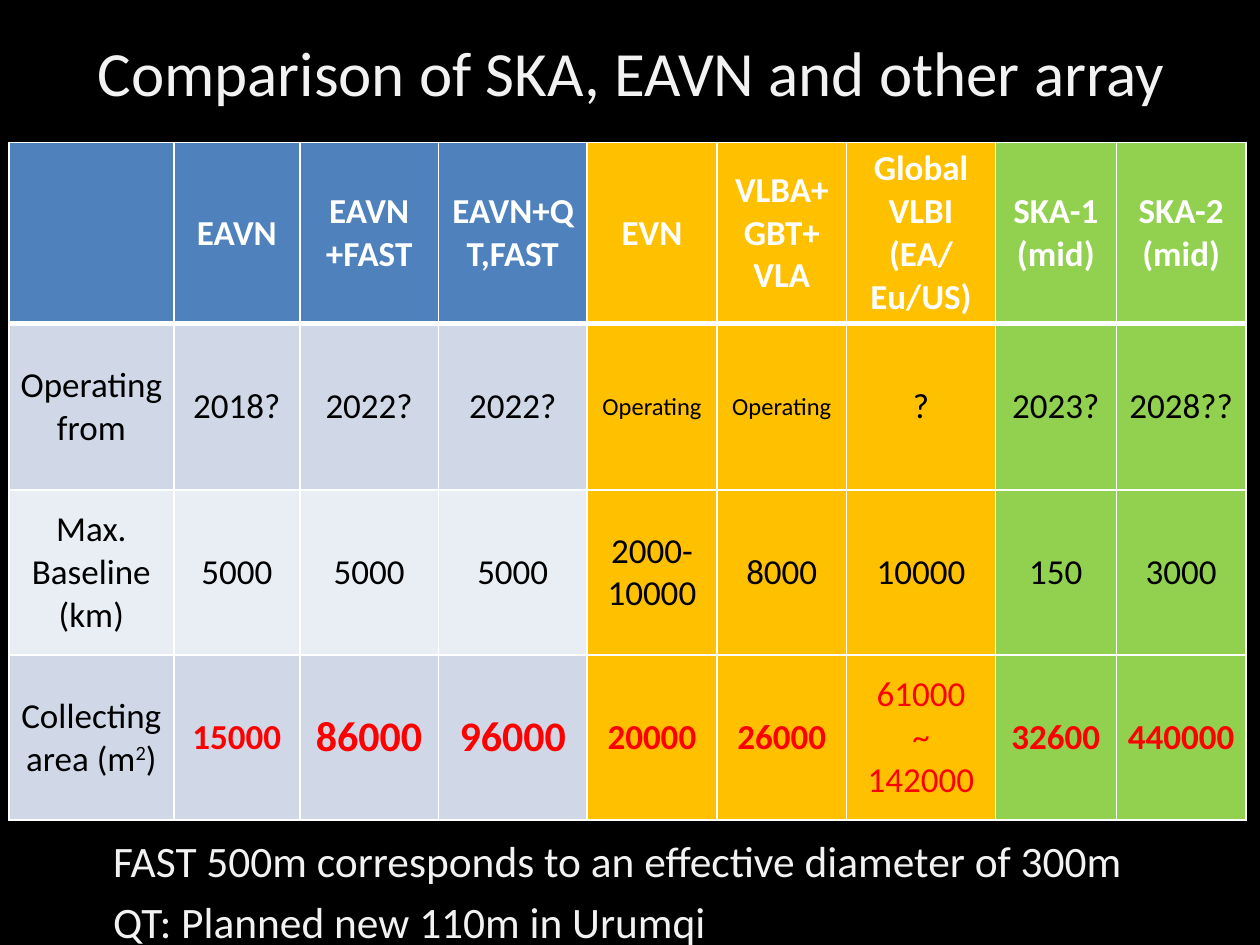
"""Build a slide comparing the SKA, the EAVN and other radio arrays."""
import pptx
import pptx.dml.color
import pptx.enum.text
import pptx.oxml
import pptx.oxml.ns
import pptx.util

Inches = pptx.util.Inches
Pt = pptx.util.Pt
RGBColor = pptx.dml.color.RGBColor
PP_ALIGN = pptx.enum.text.PP_ALIGN
MIDDLE = pptx.enum.text.MSO_ANCHOR.MIDDLE

BLACK = RGBColor(0x00, 0x00, 0x00)
WHITE = RGBColor(0xFF, 0xFF, 0xFF)
LIGHT = RGBColor(0xF2, 0xF2, 0xF2)
RED = RGBColor(0xFF, 0x00, 0x00)
BLUE = RGBColor(0x4F, 0x81, 0xBD)
BAND_DARK = RGBColor(0xD0, 0xD8, 0xE8)
BAND_LIGHT = RGBColor(0xE9, 0xED, 0xF4)
ORANGE = RGBColor(0xFF, 0xC0, 0x00)
GREEN = RGBColor(0x92, 0xD0, 0x50)

COL_WIDTHS = [1.31, 1, 1.1, 1.18, 1.03, 1.03, 1.18, 0.96, 1.03]
ROW_HEIGHTS = [1.44, 1.32, 1.31, 1.31]
ROW_FILLS = [BLUE, BAND_DARK, BAND_LIGHT, BAND_DARK]
GROUP_FILLS = [None] * 4 + [ORANGE] * 3 + [GREEN] * 2
ROWS = [
    ["", "EAVN", "EAVN\n+FAST", "EAVN+QT,FAST", "EVN", "VLBA+\nGBT+\nVLA",
     "Global\nVLBI\n(EA/Eu/US)", "SKA-1\n(mid)", "SKA-2\n(mid)"],
    ["Operating from", "2018?", "2022?", "2022?", "Operating", "Operating",
     "?", "2023?", "2028??"],
    ["Max.\nBaseline\n(km)", "5000", "5000", "5000", "2000-10000", "8000",
     "10000", "150", "3000"],
    ["Collecting area (m", "15000", "86000", "96000", "20000", "26000",
     "61000\n~\n142000", "32600", "440000"],
]
SIZES = {"Operating": 14, "86000": 24, "96000": 24}


def style(p, size, color, bold=False, align=PP_ALIGN.CENTER):
    p.alignment = align
    p.font.name = "Calibri"
    p.font.size = Pt(size)
    p.font.bold = bold
    p.font.color.rgb = color


def add_borders(cell, bottom, top):
    tc_pr = cell._tc.get_or_add_tcPr()
    for i, (side, width) in enumerate([("L", 1), ("R", 1), ("T", top), ("B", bottom)]):
        tc_pr.insert(i, pptx.oxml.parse_xml(
            f'<a:ln{side} {pptx.oxml.ns.nsdecls("a")} w="{Pt(width)}">'
            f'<a:solidFill><a:srgbClr val="{WHITE}"/></a:solidFill></a:ln{side}>'))


prs = pptx.Presentation()
prs.slide_width = Inches(10)
prs.slide_height = Inches(7.5)
s = prs.slides.add_slide(prs.slide_layouts[6])
s.background.fill.solid()
s.background.fill.fore_color.rgb = BLACK

tf = s.shapes.add_textbox(Inches(0.15), Inches(0.19), Inches(9.72), Inches(0.75)).text_frame
tf.word_wrap = True
tf.vertical_anchor = MIDDLE
tf.text = "Comparison of SKA, EAVN and other array"
style(tf.paragraphs[0], 36, LIGHT)

tf = s.shapes.add_textbox(Inches(0.8), Inches(6.57), Inches(8.61), Inches(0.9)).text_frame
tf.word_wrap = True
tf.text = "FAST 500m corresponds to an effective diameter of 300m\nQT: Planned new 110m in Urumqi"
for p in tf.paragraphs:
    style(p, 24.8, LIGHT, align=PP_ALIGN.LEFT)
    p.space_before = Pt(5)

table = s.shapes.add_table(len(ROWS), len(COL_WIDTHS), Inches(0.07), Inches(1.13),
                           Inches(sum(COL_WIDTHS)), Inches(sum(ROW_HEIGHTS))).table
for column, width in zip(table.columns, COL_WIDTHS):
    column.width = Inches(width)
for row, height in zip(table.rows, ROW_HEIGHTS):
    row.height = Inches(height)

for i, texts in enumerate(ROWS):
    for j, text in enumerate(texts):
        cell = table.cell(i, j)
        cell.text = text
        cell.vertical_anchor = MIDDLE
        cell.margin_left = cell.margin_right = Inches(0.09)
        cell.margin_top = cell.margin_bottom = Inches(0.04)
        cell.fill.solid()
        cell.fill.fore_color.rgb = GROUP_FILLS[j] or ROW_FILLS[i]
        add_borders(cell, bottom=3 if i == 0 else 1, top=3 if i == 1 else 1)
        area = i == 3 and j > 0
        color = WHITE if i == 0 else RED if area else BLACK
        bold = i == 0 or (area and "~" not in text)
        for p in cell.text_frame.paragraphs:
            style(p, SIZES.get(text, 20), color, bold)

p = table.cell(3, 0).text_frame.paragraphs[0]
r = p.add_run()
r.text = "2"
r.font._element.set("baseline", "30000")
p.add_run().text = ")"

prs.save("out.pptx")
